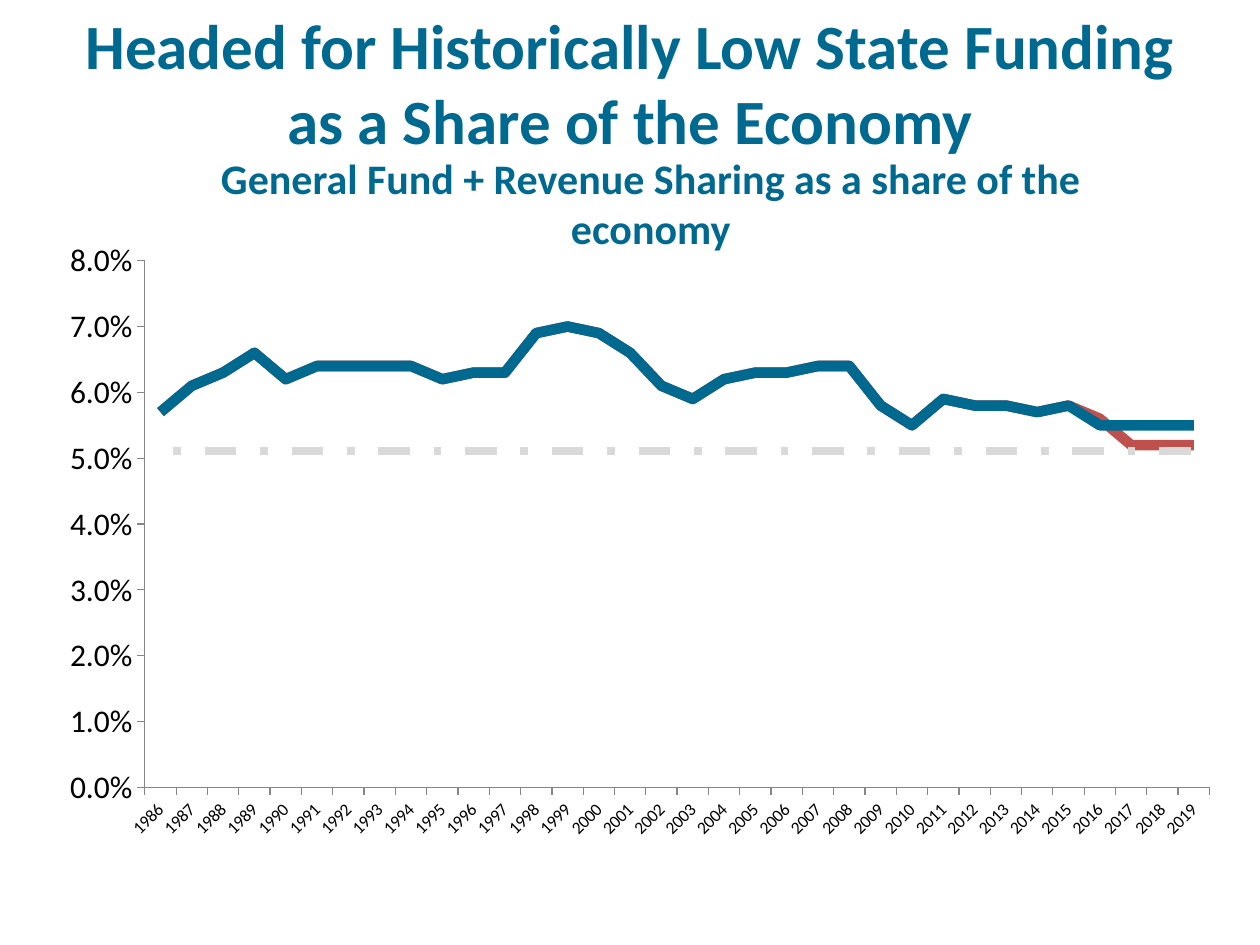
"""Build a slide charting state funding as a share of the economy."""
from lxml import etree
from pptx import Presentation
from pptx.chart.data import CategoryChartData
from pptx.dml.color import RGBColor
from pptx.enum.chart import XL_CHART_TYPE, XL_TICK_MARK
from pptx.enum.dml import MSO_LINE
from pptx.enum.shapes import MSO_CONNECTOR
from pptx.enum.text import PP_ALIGN
from pptx.oxml import parse_xml
from pptx.oxml.ns import nsdecls, qn
from pptx.util import Inches, Pt

LINE_CHART = XL_CHART_TYPE.LINE
TICK_OUT, TICK_NONE = XL_TICK_MARK.OUTSIDE, XL_TICK_MARK.NONE
DASH_DOT = MSO_LINE.DASH_DOT
STRAIGHT = MSO_CONNECTOR.STRAIGHT
CENTER = PP_ALIGN.CENTER

TEAL = RGBColor(0x00, 0x69, 0x90)
RED = RGBColor(0xC0, 0x50, 0x4D)
LIGHT_GRAY = RGBColor(0xD9, 0xD9, 0xD9)
AXIS_GRAY = RGBColor(0x86, 0x86, 0x86)
BLACK = RGBColor(0, 0, 0)
FONT = "Calibri"

HEADINGS = [
    ("Headed for Historically Low State Funding as a Share of the Economy",
     (0.48, 0, 9.04, 0.71), 36),
    ("General Fund + Revenue Sharing as a share of the economy",
     (1.25, 1.16, 7.83, 0.91), 24),
]
YEARS = [str(year) for year in range(1986, 2020)]
HISTORY = [
    0.057, 0.061, 0.063, 0.066, 0.062, 0.064, 0.064, 0.064, 0.064, 0.062,
    0.063, 0.063, 0.069, 0.07, 0.069, 0.066, 0.061, 0.059, 0.062, 0.063,
    0.063, 0.064, 0.064, 0.058, 0.055, 0.059, 0.058, 0.058, 0.057, 0.058,
]
SERIES = [
    ("Series 1", [0.056, 0.052, 0.052, 0.052], RED),
    ("Series 2", [0.055, 0.055, 0.055, 0.055], TEAL),
]
CHART_AREA = (0.33, 1.32, 9.42, 5.43)
PLOT_AREA = {"x": 0.087, "y": 0.138, "w": 0.897, "h": 0.77}
REFERENCE_LINE = (9.45, 3.58, 1.25, 3.58)


def set_format(target, values):
    for name, value in values.items():
        setattr(target, name, value)


def set_font(font, size, color, bold=False):
    set_format(font, {"name": FONT, "size": Pt(size), "bold": bold})
    font.color.rgb = color


def place_plot(chart):
    plot_area = chart.element.find(".//" + qn("c:plotArea"))
    for layout in plot_area.findall(qn("c:layout")):
        plot_area.remove(layout)
    settings = {"layoutTarget": "inner", "xMode": "edge", "yMode": "edge", **PLOT_AREA}
    entries = "".join(f'<c:{name} val="{value}"/>' for name, value in settings.items())
    plot_area.insert(0, parse_xml(
        f'<c:layout {nsdecls("c")}><c:manualLayout>{entries}</c:manualLayout></c:layout>'))


def add_funding_chart(page):
    data = CategoryChartData(number_format="0.0%")
    data.categories = YEARS
    for name, outlook, _ in SERIES:
        data.add_series(name, HISTORY + outlook)
    chart = page.shapes.add_chart(LINE_CHART, *map(Inches, CHART_AREA), data).chart
    set_format(chart, {"has_legend": False, "has_title": False})
    set_font(chart.font, 10, BLACK)
    chart.plots[0].vary_by_categories = False
    for series, (_, _, color) in zip(chart.plots[0].series, SERIES):
        series.smooth = False
        series.format.line.width = Pt(6)
        series.format.line.color.rgb = color
    for axis, size in ((chart.category_axis, 10), (chart.value_axis, 18)):
        set_format(axis, {"has_major_gridlines": False, "major_tick_mark": TICK_OUT,
                          "minor_tick_mark": TICK_NONE})
        axis.format.line.color.rgb = AXIS_GRAY
        axis.format.line.width = Pt(0.75)
        set_font(axis.tick_labels.font, size, BLACK)
    set_format(chart.value_axis, {"minimum_scale": 0, "maximum_scale": 0.08,
                                  "major_unit": 0.01})
    set_format(chart.value_axis.tick_labels, {"number_format": "0.0%",
                                              "number_format_is_linked": False})
    label_body = chart.element.find(".//" + qn("c:catAx")).find(".//" + qn("a:bodyPr"))
    label_body.set("rot", "-2700000")
    place_plot(chart)


def add_heading(page, text, area, size):
    box = page.shapes.add_textbox(*map(Inches, area))
    box.text_frame.word_wrap = True
    para = box.text_frame.paragraphs[0]
    para.alignment = CENTER
    span = para.add_run()
    span.text = text
    set_font(span.font, size, TEAL, bold=True)


def add_reference_line(page):
    line = page.shapes.add_connector(STRAIGHT, *map(Inches, REFERENCE_LINE))
    line.line.color.rgb = LIGHT_GRAY
    set_format(line.line, {"width": Pt(4.5), "dash_style": DASH_DOT})
    etree.SubElement(line.element.find(qn("p:spPr")), qn("a:effectLst"))


def main():
    deck = Presentation()
    set_format(deck, {"slide_width": Inches(10), "slide_height": Inches(7.5)})
    page = deck.slides.add_slide(deck.slide_layouts[6])
    add_funding_chart(page)
    for heading in HEADINGS:
        add_heading(page, *heading)
    add_reference_line(page)
    deck.save("out.pptx")


if __name__ == "__main__":
    main()
